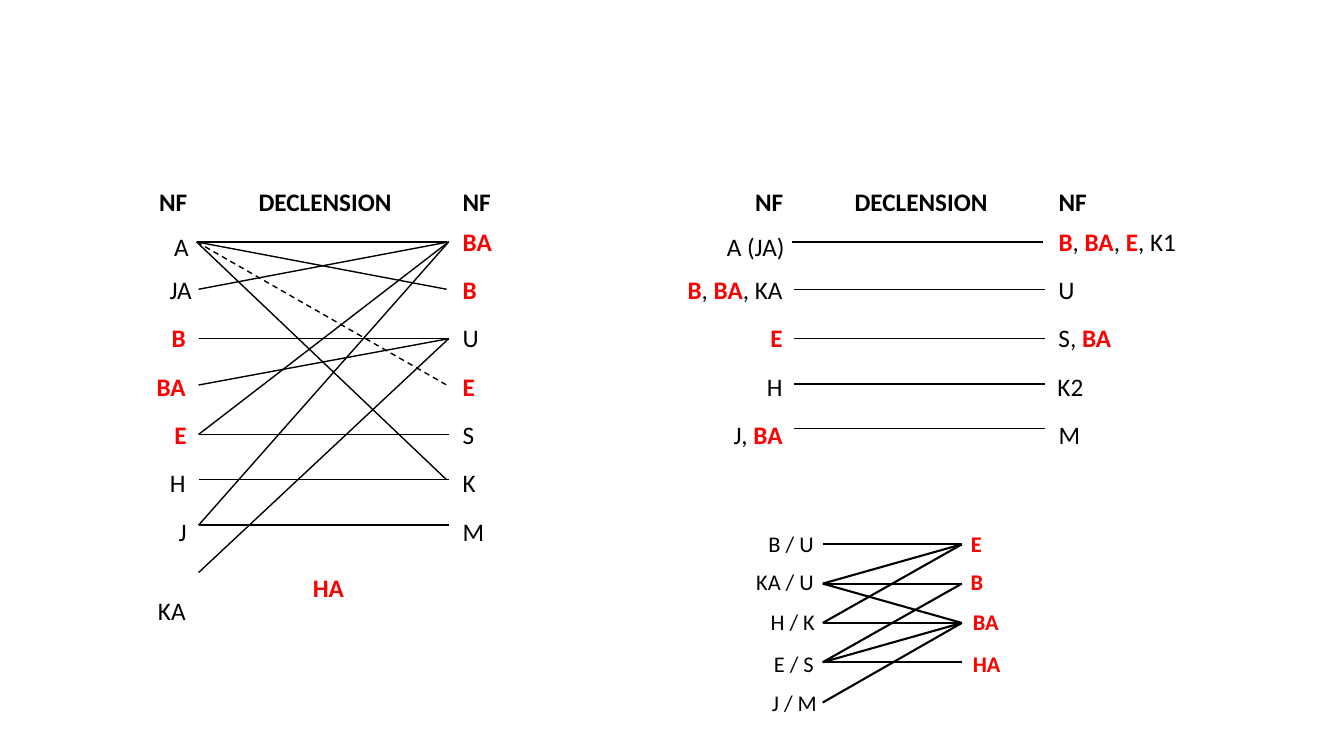
from lxml import etree
from pptx import Presentation
from pptx.dml.color import RGBColor
from pptx.enum.dml import MSO_LINE
from pptx.enum.shapes import MSO_CONNECTOR
from pptx.enum.text import MSO_AUTO_SIZE, PP_ALIGN
from pptx.oxml.ns import qn
from pptx.util import Inches, Pt

LEFT, CENTER, RIGHT = PP_ALIGN.LEFT, PP_ALIGN.CENTER, PP_ALIGN.RIGHT
DASH = MSO_LINE.DASH
STRAIGHT = MSO_CONNECTOR.STRAIGHT
BLACK, RED = "000000", "FF0000"
FRAME_FORMAT = {"word_wrap": False, "auto_size": MSO_AUTO_SIZE.SHAPE_TO_FIT_TEXT}

CLASS_TOPS = [2.2] + [round(2.67 + 0.48 * row, 2) for row in range(6)]
SOURCE_TOPS = [2.25] + CLASS_TOPS[1:] + [5.86]
STEM_TOPS = [5.21, 5.59, 5.98, 6.4, 6.79]

# Labels mark red words with asterisks and are (text, anchored edge, width).
OLD_SOURCES = [("A", 1.97, 0.35), ("JA", 2.0, 0.42), ("*B*", 1.94, 0.34),
               ("*BA*", 1.94, 0.49), ("*E*", 1.95, 0.33), ("H", 1.94, 0.36),
               ("J", 1.95, 0.28), ("KA", 1.94, 0.48)]
OLD_TARGETS = [("*BA*", 4.49, 0.49), ("*B*", 4.49, 0.34), ("U", 4.49, 0.37),
               ("*E*", 4.49, 0.32), ("S", 4.49, 0.32), ("K", 4.49, 0.34),
               ("M", 4.49, 0.42)]
OLD_ROWS = [2.4, 2.87, 3.36, 3.82, 4.31, 4.76, 5.21, 5.68]
OLD_LINKS = [(0, 0), (0, 1), (0, 3), (0, 5), (1, 0), (2, 2), (3, 2),
             (4, 0), (4, 4), (5, 5), (6, 0), (6, 6), (7, 2)]

NEW_SOURCES = [("A (JA)", 7.88, 0.78), ("*B*, *BA*, KA", 7.86, 1.17),
               ("*E*", 7.86, 0.32), ("H", 7.86, 0.36), ("J, *BA*", 7.86, 0.69)]
NEW_TARGETS = [("*B*, *BA*, *E*, K1", 10.4, 1.39), ("U", 10.4, 0.37),
               ("S, *BA*", 10.4, 0.73), ("K2", 10.39, 0.46), ("M", 10.4, 0.42)]
NEW_ROWS = [2.4, 2.87, 3.36, 3.81, 4.25]
NEW_LINKS = [(row, row) for row in range(5)]

STEM_SOURCES = [("B / U", 8.17, 0.66), ("KA / U", 8.17, 0.78),
                ("H / K", 8.18, 0.65), ("E / S", 8.17, 0.6), ("J / M", 8.2, 0.65)]
STEM_TARGETS = [("*E*", 9.53, 0.31), ("*B*", 9.53, 0.33),
                ("*BA*", 9.55, 0.46), ("*HA*", 9.55, 0.48)]
STEM_ROWS = [5.4, 5.79, 6.18, 6.57, 6.97]
STEM_LINKS = [(0, 0), (1, 0), (1, 1), (1, 2), (2, 0), (2, 2),
              (3, 1), (3, 2), (3, 3), (4, 2)]


def color(hex_value):
    """Return the colour for a hex string."""
    return RGBColor.from_string(hex_value)


def add_label(diagram, text, left, top, width, align=LEFT, size=18, heading=False):
    """Add a one-line label whose starred words are bold red."""
    height = 0.4 if size == 18 else 0.37
    label = diagram.shapes.add_textbox(*map(Inches, (left, top, width, height)))
    for attribute, value in FRAME_FORMAT.items():
        setattr(label.text_frame, attribute, value)
    paragraph = label.text_frame.paragraphs[0]
    paragraph.alignment = align
    for position, part in enumerate(text.split("*")):
        if not part:
            continue
        marked = position % 2 == 1
        run = paragraph.add_run()
        run.text = part
        font_format = {"name": "Calibri", "size": Pt(size), "bold": marked or heading}
        for attribute, value in font_format.items():
            setattr(run.font, attribute, value)
        run.font.color.rgb = color(RED if marked else BLACK)


def add_column(diagram, labels, tops, align, size=18):
    """Add a column of labels anchored at their left or right edge."""
    for (text, edge, width), top in zip(labels, tops):
        left = edge - width if align == RIGHT else edge
        add_label(diagram, text, left, top, width, align, size)


def add_links(diagram, links, rows, first_left, left, span, weight=1, dashed=()):
    """Join source rows to target rows with straight lines."""
    for source, target in links:
        start = left if source else first_left
        link = diagram.shapes.add_connector(
            STRAIGHT, *map(Inches, (start, rows[source], start + span, rows[target])))
        line_format = {"width": Pt(weight),
                       "dash_style": DASH if (source, target) in dashed else None}
        for attribute, value in line_format.items():
            setattr(link.line, attribute, value)
        link.line.color.rgb = color(BLACK)
        etree.SubElement(link._element.spPr, qn("a:effectLst"))


def add_headings(diagram, left):
    """Add the three column headings of a declension diagram."""
    for text, offset, width, align in (("NF", 0, 0.48, LEFT),
                                       ("DECLENSION", 0.98, 1.53, CENTER),
                                       ("NF", 3.01, 0.48, LEFT)):
        add_label(diagram, text, left + offset, 1.8, width, align, heading=True)


def main():
    """Build the slide with its three declension diagrams."""
    deck = Presentation()
    deck.slide_width, deck.slide_height = Inches(13.33), Inches(7.5)
    slide = deck.slides.add_slide(deck.slide_layouts[6])
    old, new, stems = (slide.shapes.add_group_shape() for _ in range(3))

    add_links(old, OLD_LINKS, OLD_ROWS, 1.95, 1.97, 2.48, dashed=[(0, 3)])
    add_column(old, OLD_SOURCES, SOURCE_TOPS, RIGHT)
    add_column(old, OLD_TARGETS, CLASS_TOPS, LEFT)
    add_headings(old, 1.48)
    add_label(old, "*HA*", 3, 5.63, 0.51, RIGHT)

    add_links(new, NEW_LINKS, NEW_ROWS, 7.86, 7.88, 2.48)
    add_column(new, NEW_SOURCES, SOURCE_TOPS, RIGHT)
    add_column(new, NEW_TARGETS, CLASS_TOPS, LEFT)
    add_headings(new, 7.39)

    add_column(stems, STEM_SOURCES, STEM_TOPS, RIGHT, 16)
    add_column(stems, STEM_TARGETS, STEM_TOPS, LEFT, 16)
    add_links(stems, STEM_LINKS, STEM_ROWS, 8.16, 8.16, 1.38, 1.5)
    deck.save("out.pptx")


if __name__ == "__main__":
    main()
